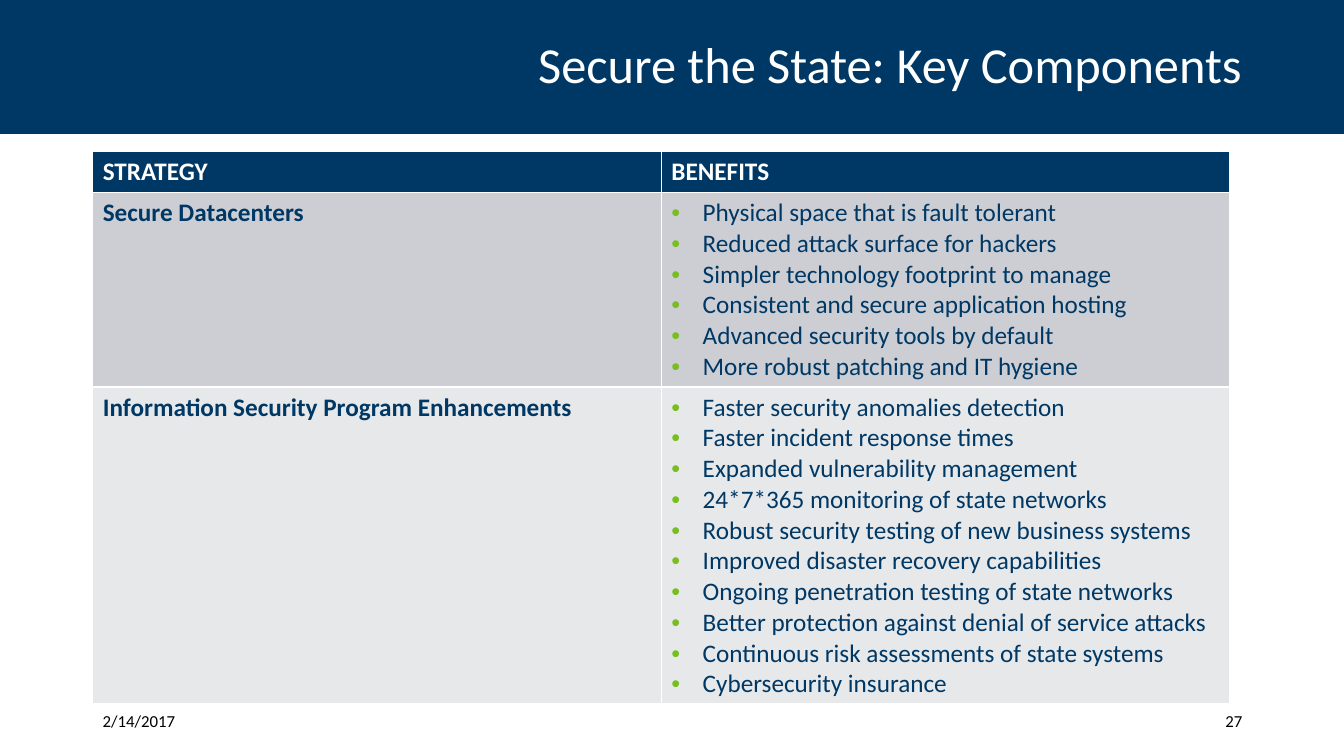
from dataclasses import dataclass

from lxml.etree import SubElement as Sub
from pptx import Presentation
from pptx.dml.color import RGBColor as Rgb
from pptx.enum.shapes import MSO_SHAPE as Kind
from pptx.enum.text import MSO_ANCHOR as Anchor, PP_ALIGN as Align
from pptx.oxml.ns import qn
from pptx.slide import Slide
from pptx.table import Table
from pptx.text.text import TextFrame as Frame
from pptx.util import Inches, Pt


@dataclass(frozen=True)
class Theme:
    font: str = "Calibri"
    navy: str = "003865"
    green: str = "78BE21"
    white: str = "FFFFFF"
    black: str = "000000"
    head: int = 36
    body: int = 18
    foot: int = 12


@dataclass(frozen=True)
class Row:
    name: str
    gains: list[str]
    fill: str
    tall: float
    ink: str = Theme.navy
    dots: bool = True


@dataclass(frozen=True)
class Note:
    text: str
    left: float
    wide: float
    side: Align


LOOK = Theme()
EDGE = 0.92
SPAN = 11.5
INDENT = Inches(0.31)

ROWS = [
    Row("STRATEGY", ["BENEFITS"], LOOK.navy, 0.41, LOOK.white, False),
    Row("Secure Datacenters", [
        "Physical space that is fault tolerant",
        "Reduced attack surface for hackers",
        "Simpler technology footprint to manage",
        "Consistent and secure application hosting",
        "Advanced security tools by default",
        "More robust patching and IT hygiene",
    ], "CCCED3", 1.93),
    Row("Information Security Program Enhancements", [
        "Faster security anomalies detection",
        "Faster incident response times",
        "Expanded vulnerability management",
        "24*7*365 monitoring of state networks",
        "Robust security testing of new business systems",
        "Improved disaster recovery capabilities",
        "Ongoing penetration testing of state networks",
        "Better protection against denial of service attacks",
        "Continuous risk assessments of state systems",
        "Cybersecurity insurance",
    ], "E7E8EA", 3.14),
]

NOTES = [
    Note("2/14/2017", EDGE, 1.49, Align.LEFT),
    Note("27", EDGE + SPAN - 1.6, 1.6, Align.RIGHT),
]


def write(frame: Frame, lines: list[str], size: int, ink: str,
          bold: bool = False, side: Align = Align.LEFT, dots: bool = False) -> None:
    for i, line in enumerate(lines):
        para = frame.add_paragraph() if i else frame.paragraphs[0]
        para.alignment = side
        run = para.add_run()
        run.text = line
        font = run.font
        font.name, font.size, font.bold = LOOK.font, Pt(size), bold
        font.color.rgb = Rgb.from_string(ink)
        if dots:
            props = para._p.get_or_add_pPr()
            props.set("marL", str(INDENT))
            props.set("indent", str(-INDENT))
            tint = Sub(props, qn("a:buClr"))
            Sub(tint, qn("a:srgbClr"), val=LOOK.green)
            Sub(props, qn("a:buFont"), typeface="Arial")
            Sub(props, qn("a:buChar"), char="•")


def add_head(slide: Slide, text: str, width: int) -> None:
    title = slide.shapes.title
    band = slide.shapes.add_shape(Kind.RECTANGLE, 0, 0, width, Inches(1.33))
    band.shadow.inherit = False
    band.fill.solid()
    band.fill.fore_color.rgb = Rgb.from_string(LOOK.navy)
    band.line.fill.background()
    title.element.addprevious(band.element)
    title.left, title.top = Inches(EDGE), Inches(0.17)
    title.width, title.height = Inches(SPAN), Inches(1)
    frame = title.text_frame
    frame.vertical_anchor = Anchor.MIDDLE
    write(frame, [text], LOOK.head, LOOK.white, side=Align.RIGHT)
    frame.paragraphs[0].line_spacing = 0.9


def add_note(slide: Slide, note: Note) -> None:
    box = slide.shapes.add_textbox(
        Inches(note.left), Inches(6.95), Inches(note.wide), Inches(0.4))
    frame = box.text_frame
    frame.word_wrap = True
    frame.vertical_anchor = Anchor.MIDDLE
    write(frame, [note.text], LOOK.foot, LOOK.black, side=note.side)


def fill_row(table: Table, i: int, row: Row) -> None:
    table.rows[i].height = Inches(row.tall)
    name, gains = table.rows[i].cells
    for cell in (name, gains):
        cell.fill.solid()
        cell.fill.fore_color.rgb = Rgb.from_string(row.fill)
    write(name.text_frame, [row.name], LOOK.body, row.ink, bold=True)
    write(gains.text_frame, row.gains, LOOK.body, row.ink,
          bold=not row.dots, dots=row.dots)


def main() -> None:
    deck = Presentation()
    deck.slide_width, deck.slide_height = Inches(13.33), Inches(7.5)
    slide = deck.slides.add_slide(deck.slide_layouts[5])
    add_head(slide, "Secure the State: Key Components", deck.slide_width)
    for note in NOTES:
        add_note(slide, note)
    tall = sum(row.tall for row in ROWS)
    table = slide.shapes.add_table(
        len(ROWS), 2, Inches(EDGE), Inches(1.5), Inches(11.28), Inches(tall)).table
    for i, row in enumerate(ROWS):
        fill_row(table, i, row)
    deck.save("out.pptx")


if __name__ == "__main__":
    main()
